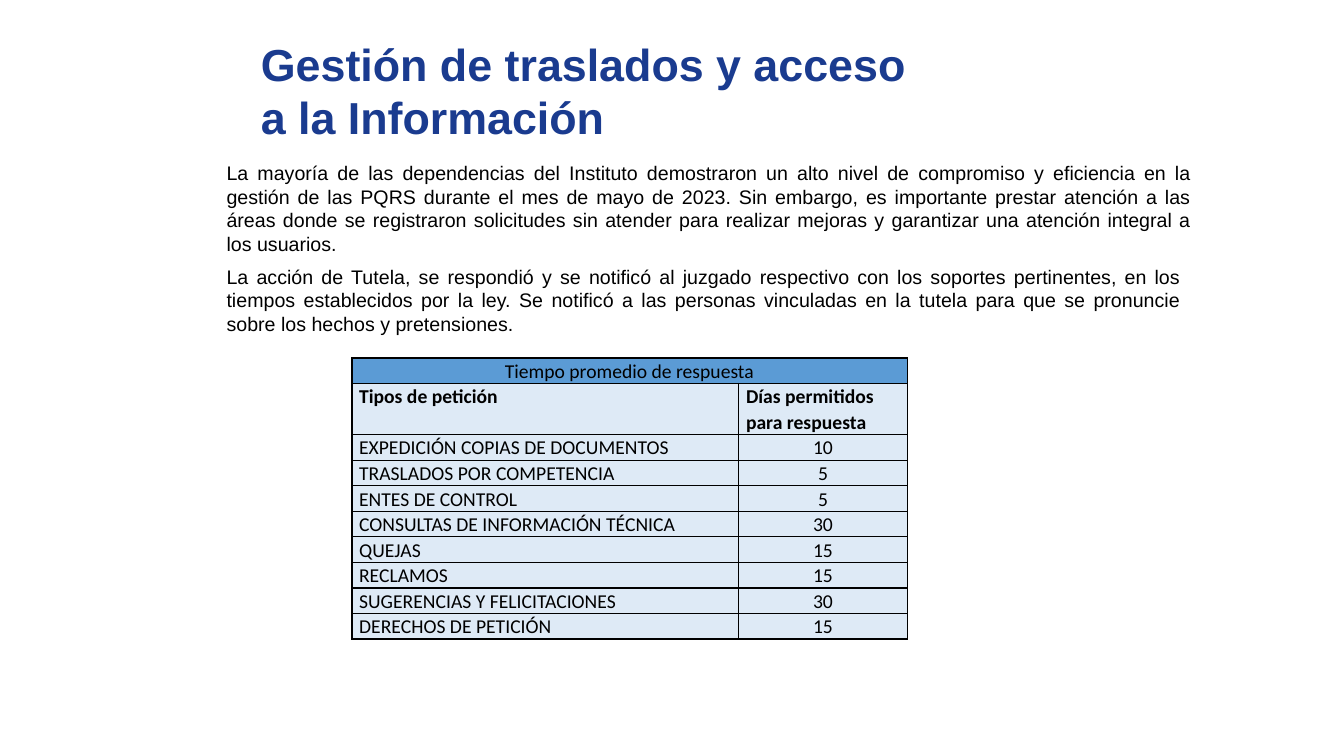
from lxml import etree
from pptx import Presentation
from pptx.dml.color import RGBColor
from pptx.enum import text
from pptx.oxml import ns
from pptx.util import Cm, Pt

HEADING = "Gestión de traslados y acceso a la Información"
STATEMENTS = [
    (3.94, 24.82, "La mayoría de las dependencias del Instituto demostraron un alto nivel de compromiso y eficiencia en la gestión de las PQRS durante el mes de mayo de 2023. Sin embargo, es importante prestar atención a las áreas donde se registraron solicitudes sin atender para realizar mejoras y garantizar una atención integral a los usuarios."),
    (6.55, 24.56, "La acción de Tutela, se respondió y se notificó al juzgado respectivo con los soportes pertinentes, en los tiempos establecidos por la ley. Se notificó a las personas vinculadas en la tutela para que se pronuncie sobre los hechos y pretensiones."),
]
RESPONSE_TIMES = [
    ("Tiempo promedio de respuesta", ""),
    ("Tipos de petición", "Días permitidos para respuesta"),
    ("EXPEDICIÓN COPIAS DE DOCUMENTOS", "10"),
    ("TRASLADOS POR COMPETENCIA", "5"),
    ("ENTES DE CONTROL", "5"),
    ("CONSULTAS DE INFORMACIÓN TÉCNICA", "30"),
    ("QUEJAS", "15"),
    ("RECLAMOS", "15"),
    ("SUGERENCIAS Y FELICITACIONES", "30"),
    ("DERECHOS DE PETICIÓN", "15"),
]
COLUMN_WIDTHS = (9.75, 4.24)
ROW_HEIGHT = 0.63

NAVY = RGBColor(0x1A, 0x3B, 0x8F)
BLUE = RGBColor(0x5B, 0x9B, 0xD5)
PALE = RGBColor(0xDE, 0xEA, 0xF6)
BLACK = RGBColor(0, 0, 0)


def set_font(paragraph, name, size, color, bold=False):
    font = paragraph.font
    font.name, font.size, font.bold = name, Pt(size), bold
    font.color.rgb = color


def add_borders(cell):
    properties = cell._tc.get_or_add_tcPr()
    for side in ("lnL", "lnR", "lnT", "lnB"):
        line = etree.SubElement(properties, ns.qn(f"a:{side}"), w=str(Pt(1)))
        fill = etree.SubElement(line, ns.qn("a:solidFill"))
        etree.SubElement(fill, ns.qn("a:srgbClr"), val=str(BLACK))


def add_heading(slide):
    heading = slide.shapes.title
    heading.left, heading.top, heading.width, heading.height = Cm(6.32), Cm(0.79), Cm(16.94), Cm(3)
    frame = heading.text_frame
    frame.text = HEADING
    frame.word_wrap = True
    frame.auto_size = text.MSO_AUTO_SIZE.NONE
    frame.vertical_anchor = text.MSO_ANCHOR.TOP
    frame.paragraphs[0].alignment = text.PP_ALIGN.LEFT
    set_font(frame.paragraphs[0], "Arial", 32, NAVY, True)


def add_statements(slide):
    for top, width, statement in STATEMENTS:
        frame = slide.shapes.add_textbox(Cm(5.46), Cm(top), Cm(width), Cm(2.64)).text_frame
        frame.word_wrap = True
        frame.text = statement
        frame.paragraphs[0].alignment = text.PP_ALIGN.JUSTIFY
        set_font(frame.paragraphs[0], "Arial", 14, BLACK)


def add_response_times(slide):
    count = len(RESPONSE_TIMES)
    table = slide.shapes.add_table(
        count, 2, Cm(8.87), Cm(9.02), Cm(sum(COLUMN_WIDTHS)), Cm(ROW_HEIGHT * (count + 1))
    ).table
    for column, width in zip(table.columns, COLUMN_WIDTHS):
        column.width = Cm(width)
    for r, values in enumerate(RESPONSE_TIMES):
        table.rows[r].height = Cm(ROW_HEIGHT * (2 if r == 1 else 1))
        for c, value in enumerate(values):
            cell = table.cell(r, c)
            add_borders(cell)
            cell.fill.solid()
            cell.fill.fore_color.rgb = BLUE if r == 0 else PALE
            cell.margin_left = cell.margin_right = Cm(0.18)
            cell.margin_top = cell.margin_bottom = 0
            cell.vertical_anchor = text.MSO_ANCHOR.BOTTOM if r > 1 else text.MSO_ANCHOR.TOP
            cell.text = value
            paragraph = cell.text_frame.paragraphs[0]
            paragraph.line_spacing = 1.07
            if r > 1:
                paragraph.space_after = Pt(8)
            centred = r == 0 or (r > 1 and c == 1)
            paragraph.alignment = text.PP_ALIGN.CENTER if centred else text.PP_ALIGN.LEFT
            set_font(paragraph, "Calibri", 14, BLACK, r == 1)
    table.cell(0, 0).merge(table.cell(0, 1))


def main():
    deck = Presentation()
    deck.slide_width, deck.slide_height = Cm(33.87), Cm(19.05)
    slide = deck.slides.add_slide(deck.slide_layouts.get_by_name("Title Only"))
    add_response_times(slide)
    add_heading(slide)
    add_statements(slide)
    deck.save("out.pptx")


if __name__ == "__main__":
    main()
